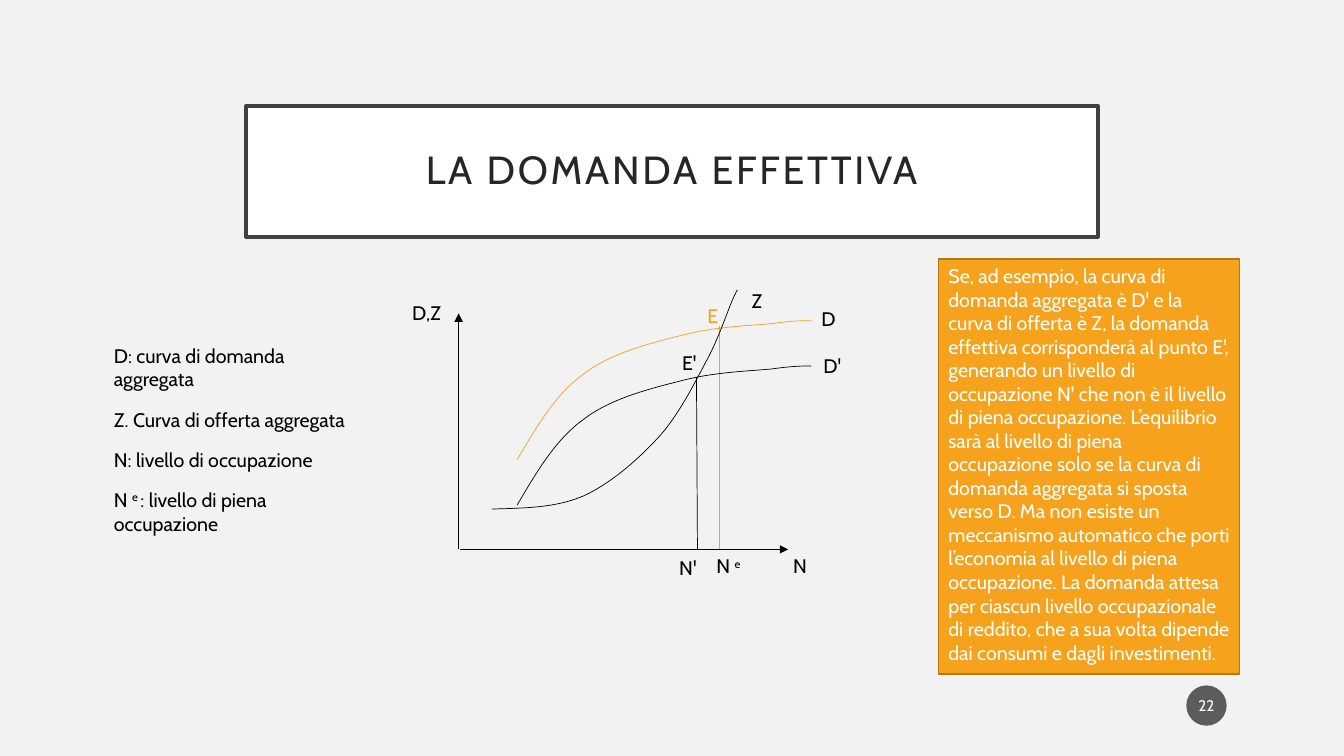
from lxml import etree
from pptx import Presentation
from pptx import util as u
from pptx.dml.color import RGBColor
from pptx.enum import shapes, text
from pptx.oxml.ns import qn

# Content: a text is a list of paragraphs, a paragraph a list of runs;
# a run starting with "^" is superscript
TITLE = [["LA DOMANDA EFFETTIVA"]]
PAGE = [["22"]]
LEGEND = [
    ["D: curva di domanda aggregata"],
    ["Z. Curva di offerta aggregata"],
    ["N: livello di occupazione"],
    ["N ", "^e ", ": livello di piena occupazione"],
]
COMMENT = [[
    "Se, ad esempio, la curva di domanda aggregata è D' e la curva di offerta è Z, "
    "la domanda effettiva corrisponderà al punto E', generando un livello di "
    "occupazione N' che non è il livello di piena occupazione. L’equilibrio sarà al "
    "livello di piena occupazione solo se la curva di domanda aggregata si sposta "
    "verso D. Ma non esiste un meccanismo automatico che porti l’economia al livello "
    "di piena occupazione. La domanda attesa per ciascun livello occupazionale di "
    "reddito, che a sua volta dipende dai consumi e dagli investimenti."
]]

# Diagram labels: runs, left, top, colour
LABELS = [
    (["D,Z"], 287.3, 211.7, "black"),
    (["N"], 559.4, 392.4, "black"),
    (["Z"], 529.9, 203, "black"),
    (["D'"], 581, 249.1, "black"),
    (["D"], 579.6, 216, "black"),
    (["N'"], 478.1, 393.8, "black"),
    (["N ", "^e"], 504.7, 392.4, "black"),
    (["E'"], 480.2, 247, "black"),
    (["E"], 498.2, 213.8, "orange"),
]

# Straight lines: from, to, colour, arrowhead
BASE = 392.4
LINES = [
    ((327.6, BASE), (327.6, 223.9), "black", True),
    ((328.3, BASE), (563, BASE), "black", True),
    ((514.1, 232.6), (514.1, BASE), "orange", False),
    ((497.5, 269.3), (498.2, BASE), "black", False),
]

# Curves: a start point, then three Bezier points per segment
DEMAND_LOW = [
    (369.4, 360.7),
    (383, 337.7), (396.7, 313.9), (416.9, 299.5),
    (436.3, 284.4), (465.8, 277.2), (488.9, 271.4),
    (511.2, 265.7), (536.4, 265), (551.5, 263.5),
    (566.6, 261.4), (573.1, 261.4), (579.6, 261.4),
]
SUPPLY = [
    (351.4, 363.6),
    (374.4, 362.9), (396.7, 362.9), (416.9, 354.2),
    (437, 344.9), (456.5, 327.6), (471.6, 311),
    (486, 294.5), (496.8, 272.2), (505.4, 256.3),
    (514.1, 239.8), (519.8, 221.8), (523.4, 213.8),
    (527, 205.9), (527, 206.6), (526.3, 208.1),
]
DEMAND_RISE = 32.4

THEME = {
    "font": "Cabin", "title": 28, "body": 14, "page": 11, "thin": 0.5,
    "bg": "F2F2F2", "white": "FFFFFF", "black": "000000", "ink": "262626",
    "frame": "404040", "badge": "1D1D1D", "orange": "F6A21D", "rim": "B67815",
}


def color(name):
    return RGBColor.from_string(THEME[name])


def write(sp, paragraphs, size, ink, align=text.PP_ALIGN.LEFT,
          anchor=text.MSO_ANCHOR.TOP, after=0, leading=None, spacing=None):
    tf = sp.text_frame
    tf.word_wrap = True
    tf.vertical_anchor = anchor
    for i, runs in enumerate(paragraphs):
        p = tf.add_paragraph() if i else tf.paragraphs[0]
        p.alignment = align
        p.space_after = u.Pt(after)
        if leading:
            p.line_spacing = leading
        for content in runs:
            r = p.add_run()
            r.text = content.lstrip("^")
            r.font.name = THEME["font"]
            r.font.size = u.Pt(THEME[size])
            r.font.color.rgb = color(ink)
            rpr = r._r.get_or_add_rPr()
            if content.startswith("^"):
                rpr.set("baseline", "30000")
            if spacing:
                rpr.set("spc", str(spacing * 100))
    return tf


def add_box(s, kind, box, fill, line=None, width=1):
    sp = s.shapes.add_shape(kind, *map(u.Pt, box))
    sp.shadow.inherit = False
    sp.fill.solid()
    sp.fill.fore_color.rgb = color(fill)
    if line:
        sp.line.color.rgb = color(line)
        sp.line.width = u.Pt(width)
    else:
        sp.line.fill.background()
    return sp


def add_text(s, box, paragraphs, ink="black", **style):
    sp = s.shapes.add_textbox(*map(u.Pt, box))
    write(sp, paragraphs, "body", ink, **style)


def add_line(s, start, end, ink, arrow):
    sp = s.shapes.add_connector(shapes.MSO_CONNECTOR.STRAIGHT, *map(u.Pt, start + end))
    sp.line.color.rgb = color(ink)
    sp.line.width = u.Pt(THEME["thin"])
    if arrow:
        etree.SubElement(sp.line._get_or_add_ln(), qn("a:tailEnd"), type="triangle")
    etree.SubElement(sp._element.spPr, qn("a:effectLst"))


def add_curve(s, points, ink):
    start, *rest = [(u.Pt(x), u.Pt(y)) for x, y in points]
    builder = s.shapes.build_freeform(*start, scale=1.0)
    builder.add_line_segments(rest, close=False)
    sp = builder.convert_to_shape()
    # Join every three vertices into one cubic segment
    vertices = list(sp._element.iter(qn("a:lnTo")))
    outline = vertices[0].getparent()
    for i in range(0, len(vertices), 3):
        cubic = etree.SubElement(outline, qn("a:cubicBezTo"))
        for vertex in vertices[i:i + 3]:
            cubic.append(vertex[0])
            outline.remove(vertex)
    sp.shadow.inherit = False
    sp.fill.background()
    sp.line.color.rgb = color(ink)
    sp.line.width = u.Pt(THEME["thin"])


def main():
    prs = Presentation()
    prs.slide_width, prs.slide_height = u.Pt(960), u.Pt(540)
    s = prs.slides.add_slide(prs.slide_layouts[6])
    s.background.fill.solid()
    s.background.fill.fore_color.rgb = color("bg")
    rect = shapes.MSO_SHAPE.RECTANGLE
    centred = {"align": text.PP_ALIGN.CENTER, "anchor": text.MSO_ANCHOR.MIDDLE}

    # Title
    title = add_box(s, rect, (175.7, 75.6, 608.6, 93.6), "white", "frame", 2.5)
    write(title, TITLE, "title", "ink", leading=0.9, spacing=2, **centred)

    # Page number
    badge = add_box(s, shapes.MSO_SHAPE.OVAL, (847.4, 489.6, 28.8, 28.8), "badge")
    fill = badge._element.spPr.find(qn("a:solidFill"))
    etree.SubElement(fill[0], qn("a:alpha"), val="70000")
    tf = write(badge, PAGE, "page", "white", **centred)
    tf.margin_left = tf.margin_right = u.Pt(1.4)

    # Diagram
    for line in LINES:
        add_line(s, *line)
    add_curve(s, [(x, y - DEMAND_RISE) for x, y in DEMAND_LOW], "orange")
    add_curve(s, DEMAND_LOW, "black")
    add_curve(s, SUPPLY, "black")
    for runs, left, top, ink in LABELS:
        add_text(s, (left, top, 40.3, 24.5), [runs], ink)

    # Legend and comment
    add_text(s, (74.2, 241.9, 188.6, 111.6), LEGEND, after=12)
    card = add_box(s, rect, (670.3, 185, 215.3, 296.6), "orange", "rim")
    write(card, COMMENT, "body", "white")

    prs.save("out.pptx")


if __name__ == "__main__":
    main()
